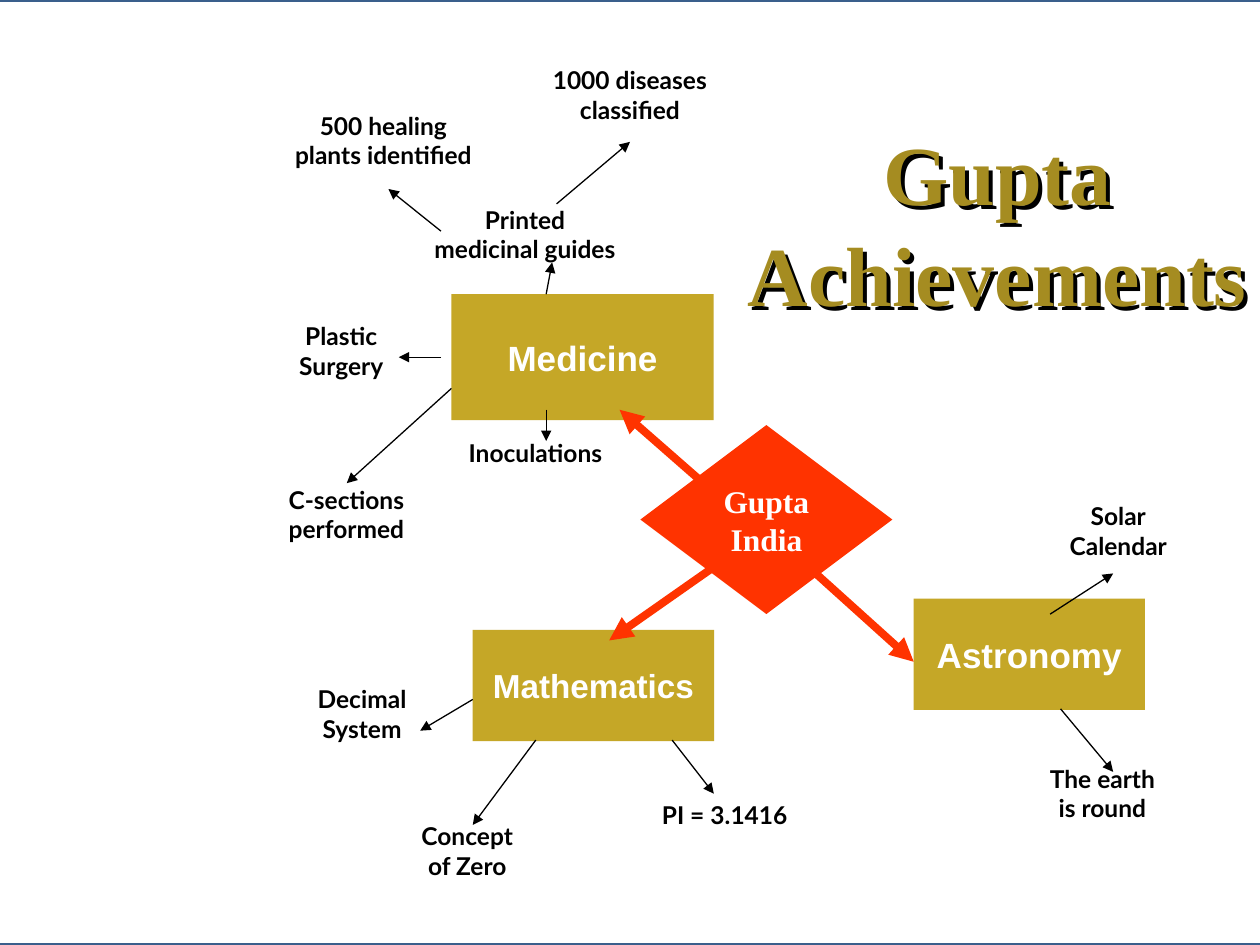
from dataclasses import dataclass

from lxml.etree import SubElement
from pptx import Presentation
from pptx.dml.color import RGBColor
from pptx.enum.shapes import MSO_CONNECTOR, MSO_SHAPE as Shape
from pptx.enum.text import MSO_ANCHOR as Anchor, MSO_AUTO_SIZE as AutoSize, PP_ALIGN as Align
from pptx.oxml.ns import qn
from pptx.util import Cm, Pt

WHITE = RGBColor(0xFF, 0xFF, 0xFF)
BLACK = RGBColor(0x00, 0x00, 0x00)
GOLD = RGBColor(0xC5, 0xA7, 0x27)
DARK_GOLD = RGBColor(0xA5, 0x8C, 0x21)
RED = RGBColor(0xFF, 0x33, 0x00)
BLUE = RGBColor(0x3A, 0x5F, 0x8C)


@dataclass(frozen=True)
class TextStyle:
    font: str
    size: float
    color: RGBColor


@dataclass(frozen=True)
class Topic:
    text: str
    left: float
    top: float
    width: float
    height: float
    style: TextStyle
    fill: RGBColor = GOLD
    kind: Shape = Shape.RECTANGLE


@dataclass(frozen=True)
class Note:
    text: str
    left: float
    top: float
    width: float
    height: float = 1.45
    style: TextStyle = TextStyle("Lato", 14, BLACK)


@dataclass(frozen=True)
class Arrow:
    x1: float
    y1: float
    x2: float
    y2: float
    color: RGBColor = BLACK
    weight: float = 0.75


TOPIC_STYLE = TextStyle("Arial", 20, WHITE)
TOPICS = [
    Topic("Medicine", 9.1, 5.93, 5.29, 2.54, TOPIC_STYLE),
    Topic("Mathematics", 9.53, 12.7, 4.87, 2.24, TextStyle("Arial", 19, WHITE)),
    Topic("Astronomy", 18.42, 12.07, 4.66, 2.24, TOPIC_STYLE),
]
CENTER = Topic("Gupta\vIndia", 12.91, 8.57, 5.08, 3.81,
               TextStyle("Times New Roman", 18, WHITE), RED, Shape.DIAMOND)
TITLE = Note("Gupta Achievements", 14.82, 2.33, 10.58, 4.32,
             TextStyle("Times New Roman", 48, DARK_GOLD))
NOTES = [
    Note("Printed\vmedicinal guides", 7.41, 4.01, 6.35),
    Note("1000 diseases\vclassified", 9.95, 1.19, 5.5),
    Note("Plastic\vSurgery", 5.08, 6.35, 3.6),
    Note("C-sections\vperformed", 4.87, 9.65, 4.23),
    Note("Inoculations", 8.68, 8.71, 4.23, 0.85),
    Note("500 healing\vplants identified", 4.87, 2.11, 5.72),
    Note("Decimal\vSystem", 5.5, 13.67, 3.6),
    Note("Concept\vof Zero", 7.62, 16.43, 3.6),
    Note("PI = 3.1416", 12.28, 16, 4.66, 0.85),
    Note("Solar\vCalendar", 20.11, 9.98, 4.87),
    Note("The earth\vis round", 20.32, 15.27, 3.81),
]
MEDICINE_ARROWS = [
    Arrow(11.01, 5.93, 11.13, 5.29),
    Arrow(8.89, 4.66, 7.83, 3.81),
    Arrow(11.22, 4.11, 12.7, 2.86),
    Arrow(8.89, 7.2, 8.04, 7.2),
    Arrow(11.01, 8.26, 11.01, 8.89),
    Arrow(9.1, 7.83, 6.99, 9.74),
]
CENTER_ARROWS = [
    Arrow(14.18, 9.74, 12.49, 8.26, RED, 4.5),
    Arrow(16.3, 11.43, 18.42, 13.34, RED, 4.5),
    Arrow(14.39, 11.43, 12.28, 12.91, RED, 4.5),
]
SCIENCE_ARROWS = [
    Arrow(21.17, 12.38, 22.44, 11.56),
    Arrow(21.38, 14.29, 22.44, 15.56),
    Arrow(9.53, 14.1, 8.47, 14.73),
    Arrow(10.8, 14.92, 9.53, 16.63),
    Arrow(13.55, 14.92, 14.39, 16),
]


def write_text(frame, text: str, style: TextStyle) -> None:
    para = frame.paragraphs[0]
    para.text = text
    para.alignment = Align.CENTER
    para.font.name = style.font
    para.font.size = Pt(style.size)
    para.font.bold = True
    para.font.color.rgb = style.color


def add_panel(page) -> None:
    panel = page.shapes.add_shape(Shape.RECTANGLE, Cm(-0.85), Cm(0), Cm(27.31), Cm(19.05))
    panel.shadow.inherit = False
    panel.fill.solid()
    panel.fill.fore_color.rgb = WHITE
    panel.line.color.rgb = BLUE
    panel.line.width = Pt(2)


def add_topic(page, topic: Topic) -> None:
    box = page.shapes.add_shape(topic.kind, Cm(topic.left), Cm(topic.top),
                                Cm(topic.width), Cm(topic.height))
    box.shadow.inherit = False
    box.fill.solid()
    box.fill.fore_color.rgb = topic.fill
    box.line.fill.background()
    box.text_frame.word_wrap = False
    box.text_frame.vertical_anchor = Anchor.MIDDLE
    write_text(box.text_frame, topic.text, topic.style)


def add_note(page, note: Note):
    box = page.shapes.add_textbox(Cm(note.left), Cm(note.top), Cm(note.width), Cm(note.height))
    box.text_frame.word_wrap = True
    box.text_frame.auto_size = AutoSize.SHAPE_TO_FIT_TEXT
    write_text(box.text_frame, note.text, note.style)
    return box


def add_arrow(page, arrow: Arrow) -> None:
    line = page.shapes.add_connector(MSO_CONNECTOR.STRAIGHT, Cm(arrow.x1), Cm(arrow.y1),
                                     Cm(arrow.x2), Cm(arrow.y2))
    line.line.color.rgb = arrow.color
    line.line.width = Pt(arrow.weight)
    SubElement(line.line._get_or_add_ln(), qn("a:tailEnd"), type="triangle")
    SubElement(line._element.spPr, qn("a:effectLst"))


def add_black_shadow(box) -> None:
    effects = SubElement(box._element.spPr, qn("a:effectLst"))
    shadow = SubElement(effects, qn("a:outerShdw"), dist="40000", dir="2700000", algn="ctr")
    SubElement(shadow, qn("a:srgbClr"), val=str(BLACK))


def main() -> None:
    deck = Presentation()
    deck.slide_width = Cm(25.4)
    deck.slide_height = Cm(19.05)
    page = deck.slides.add_slide(deck.slide_layouts[6])
    add_panel(page)
    for topic in TOPICS:
        add_topic(page, topic)
    for note in NOTES:
        add_note(page, note)
    for arrow in MEDICINE_ARROWS + CENTER_ARROWS:
        add_arrow(page, arrow)
    add_topic(page, CENTER)
    for arrow in SCIENCE_ARROWS:
        add_arrow(page, arrow)
    add_black_shadow(add_note(page, TITLE))
    deck.save("out.pptx")


if __name__ == "__main__":
    main()
